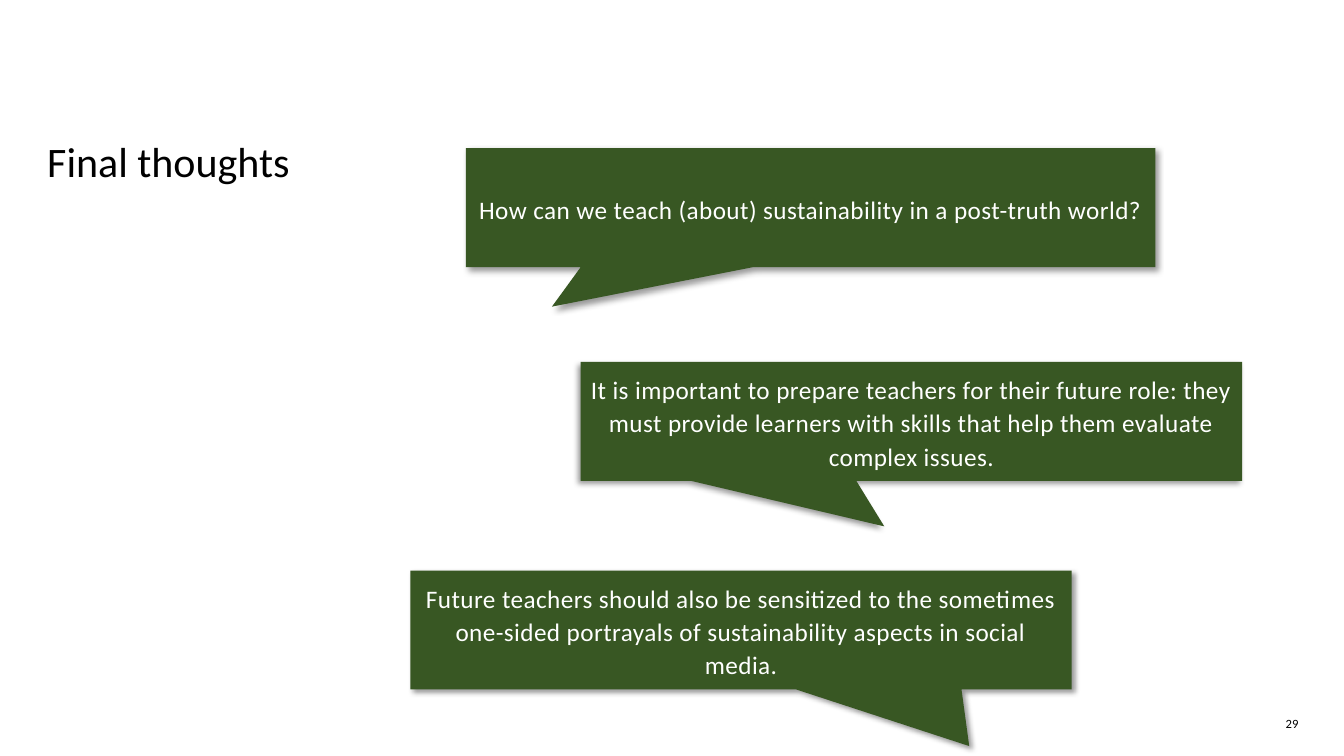
from dataclasses import dataclass

from lxml.etree import SubElement
from pptx import Presentation
from pptx.dml.color import RGBColor
from pptx.enum.shapes import MSO_SHAPE
from pptx.enum.text import MSO_ANCHOR, PP_ALIGN
from pptx.oxml.ns import qn
from pptx.util import Inches, Pt


@dataclass(frozen=True)
class Theme:
    font: str = "Calibri"
    ink: str = "000000"
    paper: str = "FFFFFF"
    green: str = "385723"
    title: int = 30
    body: int = 18
    small: int = 9


THEME = Theme()
WIDE, TALL = 6.56, 1.18  # usual callout size

# Box, tail tip (as a share of the box, from its centre), shadow angle, text
CALLOUTS = [
    ((4.62, 1.47, 6.84, TALL), (-0.375, 0.832), 45,
     "How can we teach (about) sustainability in a post-truth world?"),
    ((5.76, 3.59, WIDE, TALL), (-0.041, 0.883), 135,
     "It is important to prepare teachers for their future role: they must "
     "provide learners with skills that help them evaluate complex issues."),
    ((4.07, 5.66, WIDE, TALL), (0.345, 0.976), 45,
     "Future teachers should also be sensitized to the sometimes one-sided "
     "portrayals of sustainability aspects in social media."),
]


def put_text(shape, text, size, color=THEME.ink, align=PP_ALIGN.LEFT,
             anchor=MSO_ANCHOR.MIDDLE, lines=1.0, space=0, inset=None):
    frame = shape.text_frame
    frame.word_wrap = True
    frame.vertical_anchor = anchor
    if inset is not None:
        frame.margin_left = frame.margin_right = Inches(inset)
        frame.margin_top = frame.margin_bottom = Inches(inset)
    para = frame.paragraphs[0]
    para.alignment = align
    para.line_spacing = lines
    run = para.add_run()
    run.text = text
    run.font.name = THEME.font
    run.font.size = Pt(size)
    run.font.color.rgb = RGBColor.from_string(color)
    if space:
        run.font._element.set("spc", str(round(space * 100)))


def add_shadow(shape, angle):
    shape.shadow.inherit = False
    effects = shape._element.spPr.find(qn("a:effectLst"))
    outer = SubElement(effects, qn("a:outerShdw"), blurRad=str(Pt(4)),
                       dist=str(Pt(3)), dir=str(angle * 60000), rotWithShape="0")
    color = SubElement(outer, qn("a:srgbClr"), val=THEME.ink)
    SubElement(color, qn("a:alpha"), val="40000")


def add_title(slide, box, text):
    shape = slide.shapes.add_textbox(*map(Inches, box))
    put_text(shape, text, THEME.title, lines=0.9)


def add_callout(slide, box, tip, angle, text):
    shape = slide.shapes.add_shape(MSO_SHAPE.RECTANGULAR_CALLOUT,
                                   *map(Inches, box))
    shape.adjustments[0], shape.adjustments[1] = tip
    shape.fill.solid()
    shape.fill.fore_color.rgb = RGBColor.from_string(THEME.green)
    shape.line.fill.background()
    add_shadow(shape, angle)
    put_text(shape, text, THEME.body, color=THEME.paper,
             align=PP_ALIGN.CENTER, lines=1.1, space=0.3)


def add_number(slide, box, text):
    shape = slide.shapes.add_textbox(*map(Inches, box))
    put_text(shape, text, THEME.small, align=PP_ALIGN.RIGHT,
             anchor=MSO_ANCHOR.TOP, lines=Pt(12), space=0.2, inset=0)


def main():
    deck = Presentation()
    deck.slide_width, deck.slide_height = Inches(13.33), Inches(7.5)
    slide = deck.slides.add_slide(deck.slide_layouts[6])

    # Heading
    add_title(slide, (0.37, 1.31, 12.28, 0.63), "Final thoughts")
    # Speech callouts
    for box, tip, angle, text in CALLOUTS:
        add_callout(slide, box, tip, angle, text)
    # Page number
    add_number(slide, (12.4, 7.09, 0.48, 0.21), "29")

    deck.save("out.pptx")


if __name__ == "__main__":
    main()
